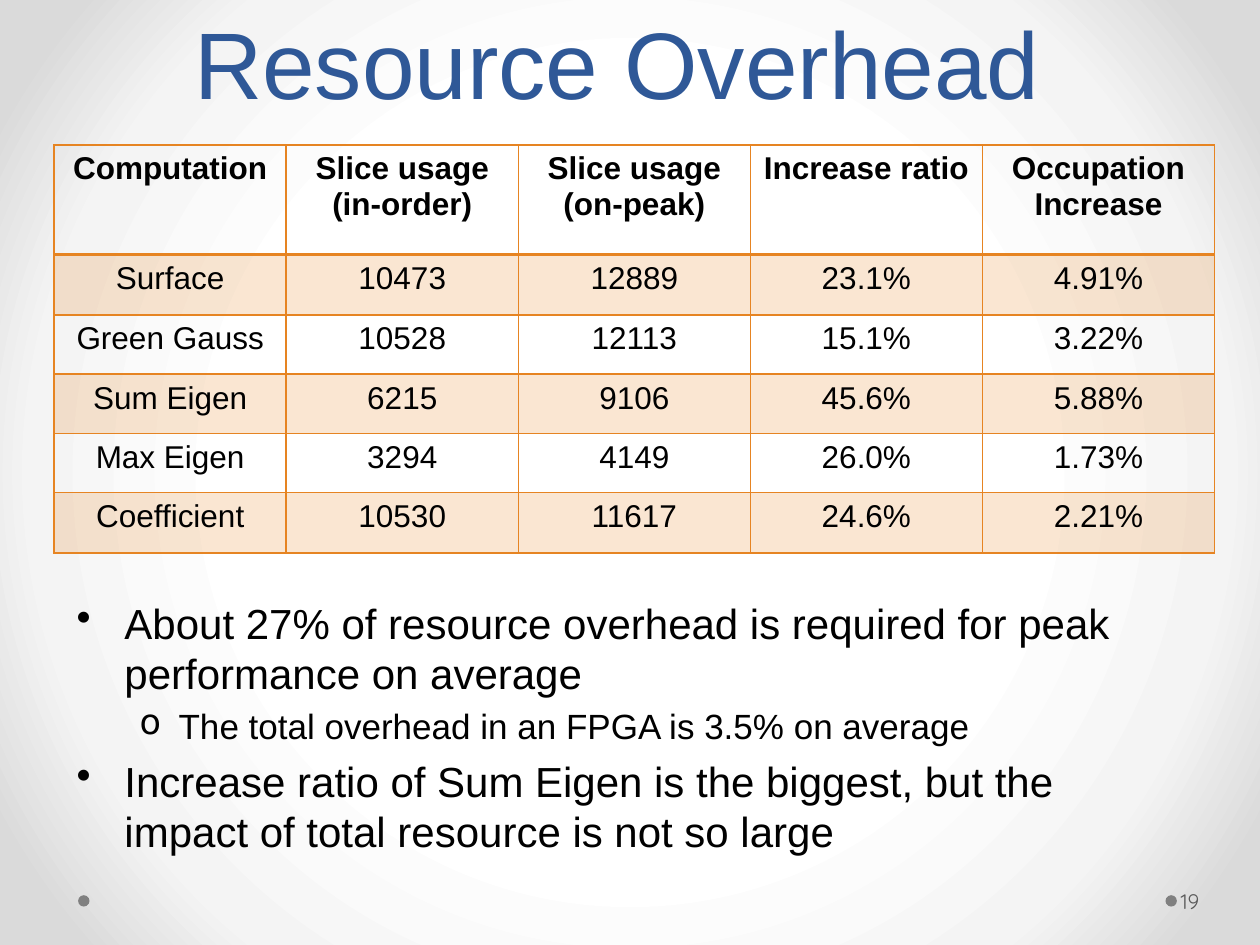
from lxml import etree
from pptx import Presentation
from pptx.dml.color import RGBColor
from pptx.enum.shapes import MSO_SHAPE
from pptx.enum.text import MSO_ANCHOR, MSO_AUTO_SIZE, PP_ALIGN
from pptx.oxml import parse_xml
from pptx.oxml.ns import qn
from pptx.util import Inches, Pt

CENTER = PP_ALIGN.CENTER
MIDDLE, BOTTOM = MSO_ANCHOR.MIDDLE, MSO_ANCHOR.BOTTOM
NO_AUTOFIT = MSO_AUTO_SIZE.NONE
OVAL = MSO_SHAPE.OVAL
DRAWING_NS = 'xmlns:a="http://schemas.openxmlformats.org/drawingml/2006/main"'
BLACK, ORANGE, BLUE, GREY, DARK_GREY = "000000", "E68422", "2F5897", "808080", "595959"
BACKDROP_STOPS = [(50, "FFFFFF"), (76, "F4F4F4"), (92, "DADADA")]
ROW_HEIGHTS = [0.87, 0.48, 0.47, 0.47, 0.47, 0.48]
USAGE = [
    ["Computation", "Slice usage (in-order)", "Slice usage (on-peak)",
     "Increase ratio", "Occupation Increase"],
    ["Surface", "10473", "12889", "23.1%", "4.91%"],
    ["Green Gauss", "10528", "12113", "15.1%", "3.22%"],
    ["Sum Eigen", "6215", "9106", "45.6%", "5.88%"],
    ["Max Eigen", "3294", "4149", "26.0%", "1.73%"],
    ["Coefficient", "10530", "11617", "24.6%", "2.21%"],
]
FINDINGS = [
    (0, "About 27% of resource overhead is required for peak performance on average"),
    (1, "The total overhead in an FPGA is 3.5% on average"),
    (0, "Increase ratio of Sum Eigen is the biggest, but the impact of total "
        "resource is not so large"),
]
FINDING_LEVELS = [(24, 0.38, 0.38, "•"), (20, 0.81, 0.31, "o")]


def colour(hex_code):
    """Turn a hex string into a colour."""
    return RGBColor.from_string(hex_code)


def inches(box):
    """Convert left, top, width and height to lengths."""
    return [Inches(length) for length in box]


def set_font(paragraph, size, hex_code, name="Arial", bold=False):
    """Format all the text of a paragraph."""
    font = paragraph.font
    font.size, font.name, font.bold = Pt(size), name, bold
    font.color.rgb = colour(hex_code)


def paint_backdrop(slide):
    """Fill the background with a gradient radiating from the centre."""
    slide.background.fill.solid()
    properties = next(slide.element.iter(qn("p:bgPr")))
    stops = "".join(
        f'<a:gs pos="{share * 1000}"><a:srgbClr val="{shade}"/></a:gs>'
        for share, shade in [(0, "FFFFFF")] + BACKDROP_STOPS + [(100, "DADADA")])
    properties.replace(properties[0], parse_xml(
        f'<a:gradFill {DRAWING_NS} rotWithShape="1"><a:gsLst>{stops}</a:gsLst>'
        '<a:path path="circle"><a:fillToRect l="50000" t="50000" r="50000" '
        'b="50000"/></a:path></a:gradFill>'))


def place_title(slide, box):
    """Move and format the title placeholder."""
    title = slide.shapes.title
    title.left, title.top, title.width, title.height = inches(box)
    frame = title.text_frame
    frame.text = "Resource Overhead "
    frame.auto_size, frame.vertical_anchor = NO_AUTOFIT, BOTTOM
    heading = frame.paragraphs[0]
    heading.alignment, heading.line_spacing = CENTER, Pt(58)
    set_font(heading, 54, BLUE)


def border_cell(cell, top, bottom):
    """Draw the four borders of a cell, with top and bottom widths in points."""
    properties = cell._tc.get_or_add_tcPr()
    widths = {"lnL": 1, "lnR": 1, "lnT": top, "lnB": bottom}
    for position, (side, width) in enumerate(widths.items()):
        properties.insert(position, parse_xml(
            f'<a:{side} {DRAWING_NS} w="{Pt(width)}"><a:solidFill>'
            f'<a:srgbClr val="{ORANGE}"/></a:solidFill></a:{side}>'))


def tint_cell(cell):
    """Fill a cell with mostly transparent orange."""
    cell.fill.solid()
    cell.fill.fore_color.rgb = colour(ORANGE)
    tint = next(cell._tc.tcPr.iter(qn("a:srgbClr")))
    etree.SubElement(tint, qn("a:alpha")).set("val", "20000")


def place_usage_table(slide, box):
    """Add the slice usage table with a plain header and banded rows."""
    table = slide.shapes.add_table(len(USAGE), len(USAGE[0]), *inches(box)).table
    table.first_row = table.horz_banding = False
    for row, height in zip(table.rows, ROW_HEIGHTS):
        row.height = Inches(height)
    for row_index, entries in enumerate(USAGE):
        for column_index, entry in enumerate(entries):
            cell = table.cell(row_index, column_index)
            cell.text = entry
            paragraph = cell.text_frame.paragraphs[0]
            paragraph.alignment = CENTER
            set_font(paragraph, 18, BLACK, bold=row_index == 0)
            if row_index % 2:
                tint_cell(cell)
            else:
                cell.fill.background()
            border_cell(cell, top=2 if row_index == 1 else 1,
                        bottom=2 if row_index == 0 else 1)


def place_findings(slide, box):
    """Add the bulleted findings on two levels."""
    frame = slide.shapes.add_textbox(*inches(box)).text_frame
    frame.word_wrap = True
    for index, (level, finding) in enumerate(FINDINGS):
        paragraph = frame.add_paragraph() if index else frame.paragraphs[0]
        size, margin, hanging, bullet = FINDING_LEVELS[level]
        paragraph.text, paragraph.level = finding, level
        paragraph.space_before = Pt(size * 0.2)
        set_font(paragraph, size, BLACK)
        properties = paragraph._p.get_or_add_pPr()
        properties.set("marL", str(Inches(margin)))
        properties.set("indent", str(-Inches(hanging)))
        mark = parse_xml(f'<a:buChar {DRAWING_NS} char="{bullet}"/>')
        properties.insert_element_before(mark, "a:tabLst", "a:defRPr", "a:extLst")


def place_footer(slide, box):
    """Add a dot at each end of the footer and the page number."""
    left, top, width, height = box
    dot_size, number_width = 0.09, 0.61
    number_left = left + width - number_width
    dot_top = top + (height - dot_size) / 2
    for dot_left in (left, number_left - dot_size):
        dot = slide.shapes.add_shape(
            OVAL, *inches((dot_left, dot_top, dot_size, dot_size)))
        dot.shadow.inherit = False
        dot.fill.solid()
        dot.fill.fore_color.rgb = colour(GREY)
        dot.line.fill.background()
    frame = slide.shapes.add_textbox(
        *inches((number_left, top, number_width, height))).text_frame
    frame.word_wrap, frame.vertical_anchor = True, MIDDLE
    frame.margin_left = Inches(0.03)
    frame.margin_top = frame.margin_right = frame.margin_bottom = Inches(0.05)
    frame.text = "19"
    set_font(frame.paragraphs[0], 12, DARK_GREY, "Quicksand")


def main():
    """Build and save the slide."""
    deck = Presentation()
    deck.slide_width, deck.slide_height = Inches(10), Inches(7.5)
    slide = deck.slides.add_slide(deck.slide_layouts[5])
    paint_backdrop(slide)
    place_footer(slide, (0.62, 6.95, 9.33, 0.4))
    place_title(slide, (0.5, 0, 9, 0.99))
    place_findings(slide, (0.51, 4.69, 9, 2.28))
    place_usage_table(slide, (0.43, 1.15, 9.21, sum(ROW_HEIGHTS)))
    deck.save("out.pptx")


if __name__ == "__main__":
    main()
